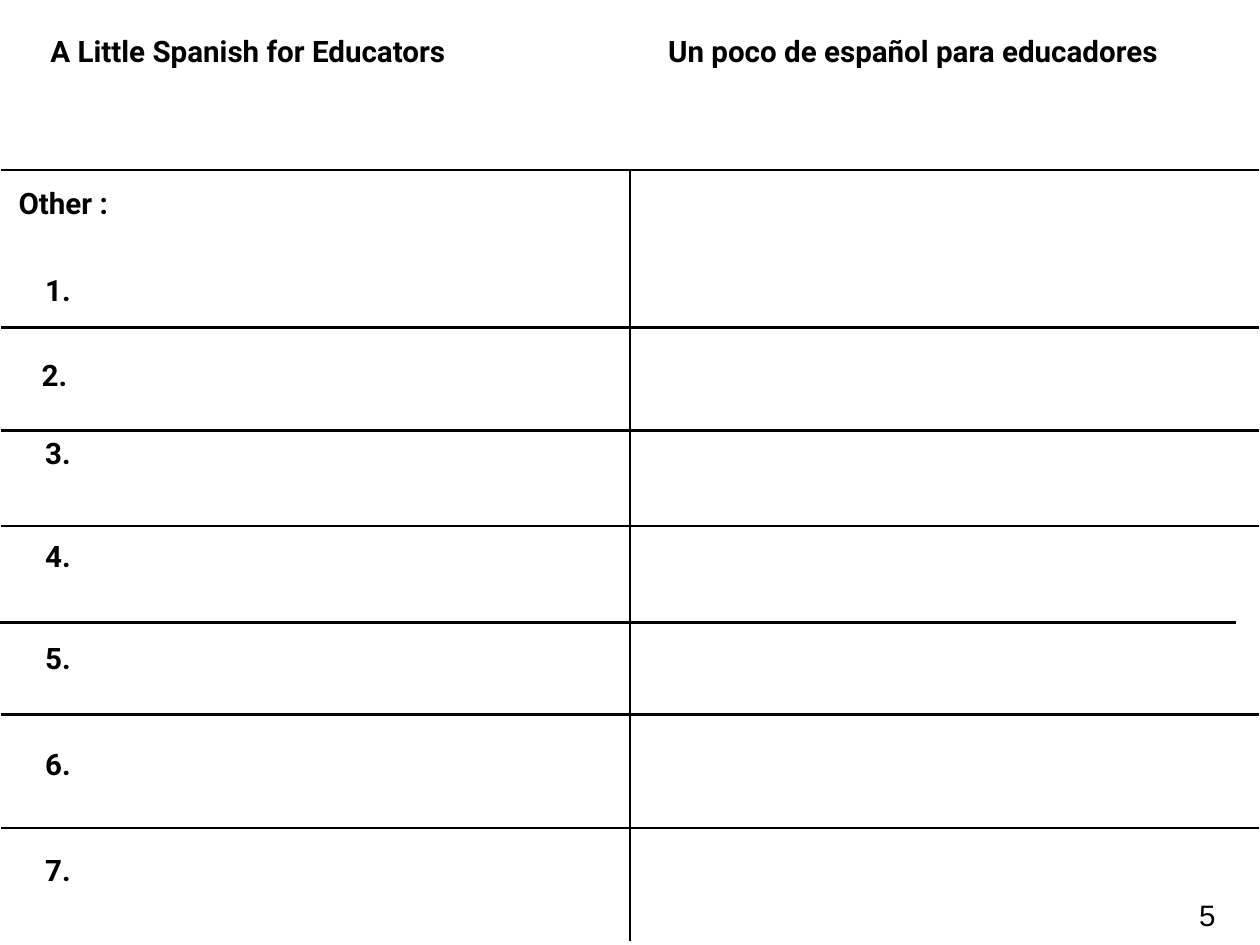
from pptx import Presentation
from pptx.dml.color import RGBColor
from pptx.enum.shapes import MSO_CONNECTOR as Conn
from pptx.enum.text import MSO_ANCHOR as Anchor, MSO_AUTO_SIZE as Auto, PP_ALIGN as Align
from pptx.oxml.ns import qn
from pptx.util import Emu, Pt
from lxml.etree import SubElement

UNIT = 9144  # EMU per px, 100 px to the inch
WIDE, HIGH = 1422, 1067
LEFT, RIGHT, MID, TOP = 1, 1421, 711, 192
INK = "000000"

# Row rules: (y, start, end)
RULES = [(y, LEFT, RIGHT) for y in (TOP, 370, 486, 594, 807, 935)]
RULES.append((703, 0, 1395))

# Headings: (text, x, y, width)
HEADS = [
    ("A Little Spanish for Educators", 51, 32, 487),
    ("Un poco de español para educadores", 748, 32, 608),
    ("Other :", 15, 204, 130),
]

# Row numbers: (x, y)
ROWS = [(45, 302), (41, 398)]
ROWS += [(45, y) for y in (486, 602, 718, 837, 957)]

BOLD = {"name": "Roboto", "size": Pt(24), "bold": True}
PLAIN = {"name": "Arial", "size": Pt(24), "bold": False}
PAD = Emu(6 * UNIT)
FRAME = {
    "margin_left": PAD, "margin_right": PAD,
    "margin_top": PAD, "margin_bottom": PAD,
    "vertical_anchor": Anchor.MIDDLE,
    "word_wrap": False, "auto_size": Auto.SHAPE_TO_FIT_TEXT,
}


def px(*nums):
    return [Emu(n * UNIT) for n in nums]


def color(code):
    return RGBColor.from_string(code)


def apply(item, style):
    for key, value in style.items():
        setattr(item, key, value)


def rule(slide, x1, y1, x2, y2):
    line = slide.shapes.add_connector(Conn.STRAIGHT, *px(x1, y1, x2, y2))
    line.line.width = Pt(2)
    line.line.color.rgb = color(INK)
    SubElement(line._element.spPr, qn("a:effectLst"))


def label(slide, text, x, y, w, h=50, style=BOLD, align=Align.LEFT):
    frame = slide.shapes.add_textbox(*px(x, y, w, h)).text_frame
    apply(frame, FRAME)
    para = frame.paragraphs[0]
    para.alignment = align
    run = para.add_run()
    run.text = text
    apply(run.font, style)
    run.font.color.rgb = color(INK)


def main():
    deck = Presentation()
    deck.slide_width, deck.slide_height = px(WIDE, HIGH)
    slide = deck.slides.add_slide(deck.slide_layouts[6])

    # Ruled grid
    for y, start, end in RULES:
        rule(slide, start, y, end, y)
    rule(slide, MID, TOP, MID, 1062)

    # Headings
    for head in HEADS:
        label(slide, *head)

    # Row numbers
    for num, (x, y) in enumerate(ROWS, 1):
        label(slide, f"{num}.", x, y, 50)

    # Page number
    label(slide, "5", 1347, 1007, 31, 51, PLAIN, Align.CENTER)

    deck.save("out.pptx")


if __name__ == "__main__":
    main()
